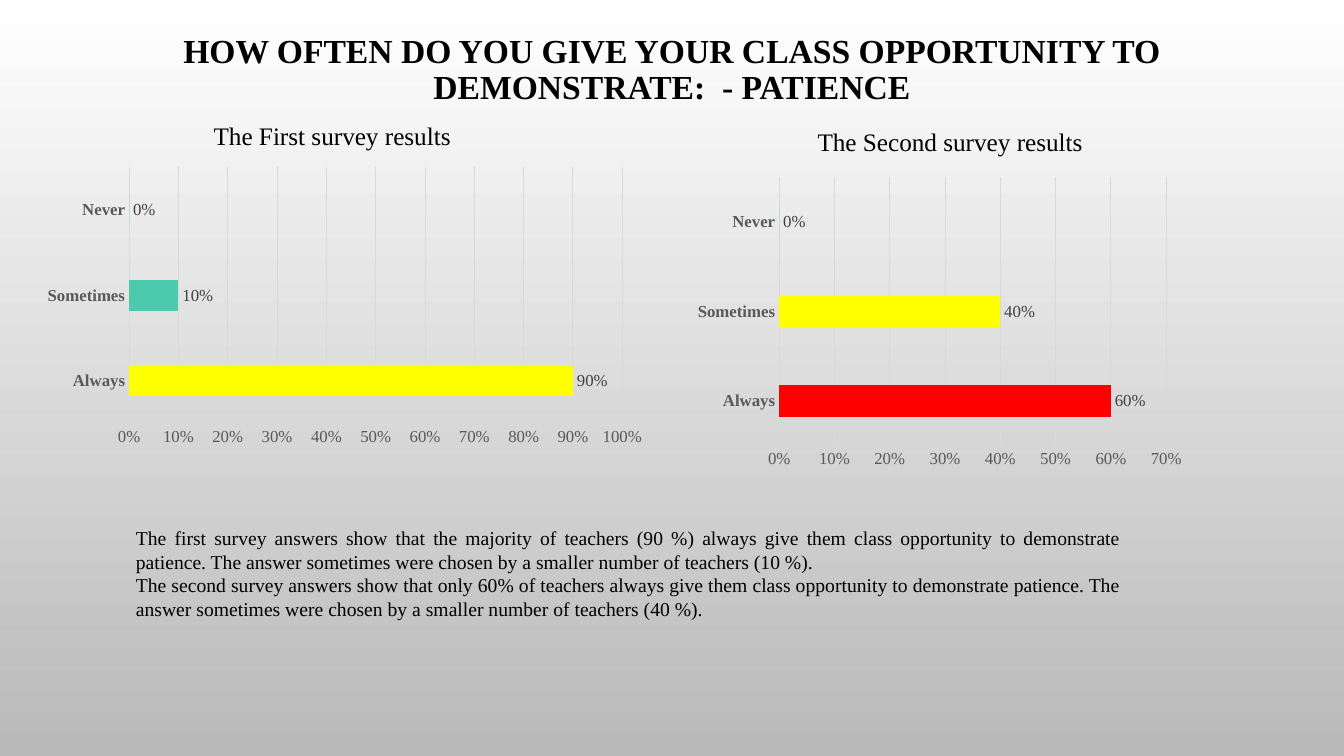
from dataclasses import dataclass

from pptx import Presentation
from pptx.chart.data import CategoryChartData
from pptx.dml.color import RGBColor
from pptx.enum import chart as ch, text
from pptx.util import Inches, Pt


@dataclass(frozen=True)
class Theme:
    font: str = "Times New Roman"
    ink: str = "000000"
    axis: str = "595959"
    label: str = "404040"
    grid: str = "D9D9D9"
    teal: str = "4BCAAD"
    yellow: str = "FFFF00"
    red: str = "FF0000"
    top: str = "FFFFFF"
    bottom: str = "B9B9B9"
    title_size: int = 24
    heading_size: int = 18
    body_size: int = 14
    chart_size: int = 12


T = Theme()
ANSWERS = ["Always", "Sometimes", "Never"]


def rgb(value):
    return RGBColor.from_string(value)


def set_attrs(obj, formats):
    for name, value in formats.items():
        setattr(obj, name, value)


def set_font(font, size, color, bold=False):
    set_attrs(font, {"name": T.font, "size": Pt(size), "bold": bold})
    font.color.rgb = rgb(color)


def paint_background(s):
    fill = s.background.fill
    fill.gradient()
    fill.gradient_angle = 270
    for stop, color in zip(fill.gradient_stops, (T.top, T.bottom)):
        stop.color.rgb = rgb(color)


def add_text(s, box, paragraphs, size, frame=None, para=None, bold=False):
    sp = s.shapes.add_textbox(*map(Inches, box))
    tf = sp.text_frame
    set_attrs(tf, {"word_wrap": True, **(frame or {})})
    for i, line in enumerate(paragraphs):
        p = tf.add_paragraph() if i else tf.paragraphs[0]
        set_attrs(p, para or {})
        r = p.add_run()
        r.text = line
        set_font(r.font, size, T.ink, bold)


def style_line(line, color):
    line.color.rgb = rgb(color)
    line.width = Pt(0.75)


def add_survey_chart(s, box, values, top_scale, point_colors):
    data = CategoryChartData(number_format="0%")
    data.categories = ANSWERS
    data.add_series("Series 1", values)
    kind = ch.XL_CHART_TYPE.BAR_CLUSTERED
    chart = s.shapes.add_chart(kind, *map(Inches, box), data).chart
    set_attrs(chart, {"has_legend": False, "has_title": False})
    set_font(chart.font, T.chart_size, T.ink)

    cat, val = chart.category_axis, chart.value_axis
    for axis in (cat, val):
        set_attrs(axis, {"major_tick_mark": ch.XL_TICK_MARK.NONE,
                         "minor_tick_mark": ch.XL_TICK_MARK.NONE})
        set_font(axis.tick_labels.font, T.chart_size, T.axis, axis is cat)
    style_line(cat.format.line, T.grid)
    set_attrs(val, {"minimum_scale": 0, "maximum_scale": top_scale,
                    "major_unit": 0.1, "has_major_gridlines": True})
    style_line(val.major_gridlines.format.line, T.grid)
    val.format.line.fill.background()
    percent = {"number_format": "0%", "number_format_is_linked": False}
    set_attrs(val.tick_labels, percent)

    plot = chart.plots[0]
    set_attrs(plot, {"gap_width": 182, "vary_by_categories": False})
    series = plot.series[0]
    series.format.fill.solid()
    series.format.fill.fore_color.rgb = rgb(T.teal)
    for i, color in enumerate(point_colors):
        fill = series.points[i].format.fill
        fill.solid()
        fill.fore_color.rgb = rgb(color)
    labels = series.data_labels
    set_attrs(labels, {**percent, "show_value": True,
                       "position": ch.XL_LABEL_POSITION.OUTSIDE_END})
    set_font(labels.font, T.chart_size, T.label)


def main():
    prs = Presentation()
    set_attrs(prs, {"slide_width": Inches(13.33), "slide_height": Inches(7.5)})
    s = prs.slides.add_slide(prs.slide_layouts[6])
    paint_background(s)

    add_text(s, (1, 0.26, 11.33, 0.88),
             ["HOW OFTEN DO YOU GIVE YOUR CLASS OPPORTUNITY TO DEMONSTRATE:  - PATIENCE"],
             T.title_size, {"vertical_anchor": text.MSO_ANCHOR.MIDDLE},
             {"alignment": text.PP_ALIGN.CENTER, "line_spacing": 0.9}, True)

    grow = {"auto_size": text.MSO_AUTO_SIZE.SHAPE_TO_FIT_TEXT}
    add_text(s, (2.02, 1.14, 3.12, 0.4), ["The First survey results"],
             T.heading_size, grow)
    add_text(s, (8.01, 1.2, 3.12, 0.4), ["The Second survey results"],
             T.heading_size, grow)

    add_survey_chart(s, (0.35, 1.6, 6.14, 2.88), (0.9, 0.1, 0), 1, [T.yellow])
    add_survey_chart(s, (6.82, 1.7, 5, 3), (0.6, 0.4, 0), 0.7, [T.red, T.yellow])

    add_text(s, (1.25, 5.17, 9.97, 1.28), [
        "The first survey answers show that the majority of teachers (90 %) always "
        "give them class opportunity to demonstrate patience. The answer sometimes "
        "were chosen by a smaller number of teachers (10 %).",
        "The second survey answers show that only 60% of teachers always give them "
        "class opportunity to demonstrate patience. The answer sometimes were chosen "
        "by a smaller number of teachers (40 %).",
    ], T.body_size, grow, {"alignment": text.PP_ALIGN.JUSTIFY})

    prs.save("out.pptx")


if __name__ == "__main__":
    main()
